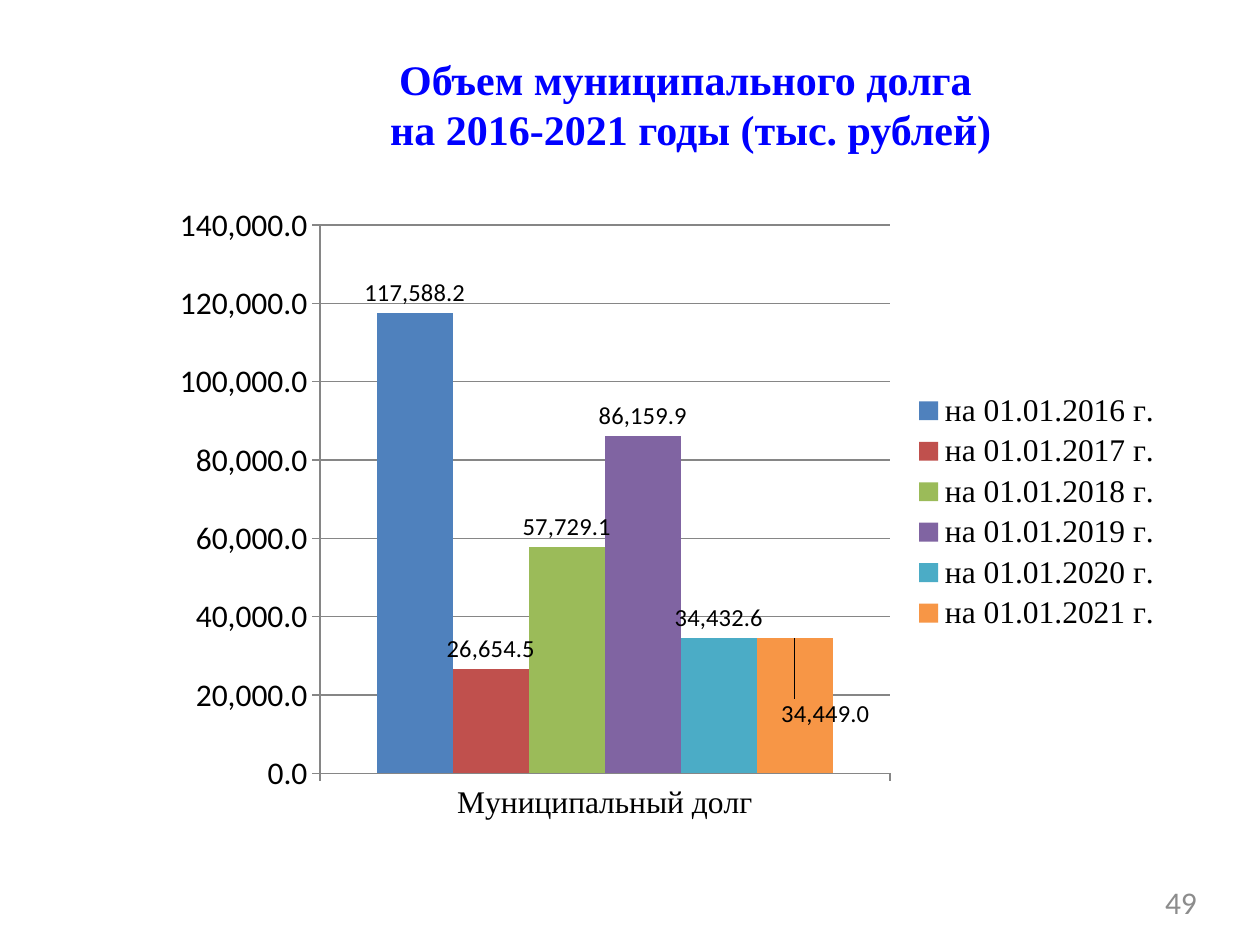
from lxml.etree import SubElement, QName
from pptx import Presentation
from pptx.chart.data import CategoryChartData
from pptx.dml.color import RGBColor
from pptx.enum.chart import XL_CHART_TYPE as ChartType, XL_LABEL_POSITION as LabelPos
from pptx.enum.chart import XL_LEGEND_POSITION as LegendPos, XL_TICK_MARK as Tick
from pptx.enum.text import MSO_ANCHOR as Anchor, PP_ALIGN as Align
from pptx.oxml.ns import qn
from pptx.util import Pt

# Content
TITLE = ["Объем муниципального долга", " на 2016-2021 годы (тыс. рублей)"]
PAGE = ["49"]
CATEGORY = "Муниципальный долг"
DEBT = [
    ("на 01.01.2016 г.", 117588.2, "4F81BD"),
    ("на 01.01.2017 г.", 26654.5, "C0504D"),
    ("на 01.01.2018 г.", 57729.1, "9BBB59"),
    ("на 01.01.2019 г.", 86159.9, "8064A2"),
    ("на 01.01.2020 г.", 34432.6, "4BACC6"),
    ("на 01.01.2021 г.", 34449.0, "F79646"),
]
SERIF, SANS = "Times New Roman", "Calibri"
NUMBERS = "#,##0.0"
PLOT = {"x": 0.16, "y": 0.05, "w": 0.56, "h": 0.86}
LAST_LABEL_SHIFT = {"x": 0.03, "y": 0.15}


def px(n):
    return round(n * 914400 / 126)


def rgb(code):
    return RGBColor.from_string(code)


def style(font, size, face, color, bold=False):
    font.size, font.name, font.bold = Pt(size), face, bold
    font.color.rgb = rgb(color)


def add_text(slide, box, lines, align, **look):
    frame = slide.shapes.add_textbox(*map(px, box)).text_frame
    frame.word_wrap = True
    frame.vertical_anchor = Anchor.MIDDLE
    frame.margin_left = frame.margin_right = frame.margin_top = frame.margin_bottom = 0
    paragraph = frame.paragraphs[0]
    paragraph.alignment = align
    for i, line in enumerate(lines):
        if i:
            paragraph.add_line_break()
        run = paragraph.add_run()
        run.text = line
        style(run.font, **look)


def set_layout(parent, place, inner=False):
    """Give a chart part a manual layout, in fractions of the chart."""
    for old in parent.findall(qn("c:layout")):
        parent.remove(old)
    layout = SubElement(parent, qn("c:layout"))
    manual = SubElement(layout, qn("c:manualLayout"))
    settings = dict(place)
    if inner:
        settings = {"layoutTarget": "inner", "xMode": "edge", "yMode": "edge", **place}
    for key, value in settings.items():
        SubElement(manual, qn("c:" + key)).set("val", str(value))
    parent.insert(1 if QName(parent).localname == "dLbl" else 0, layout)


prs = Presentation()
prs.slide_width, prs.slide_height = px(1260), px(945)
slide = prs.slides.add_slide(prs.slide_layouts[6])

# Title
add_text(slide, (157, 53, 1057, 102), TITLE, Align.CENTER,
         size=24, face=SERIF, color="0000FF", bold=True)

# Debt chart
debt_data = CategoryChartData(number_format=NUMBERS)
debt_data.categories = [CATEGORY]
for date, amount, _ in DEBT:
    debt_data.add_series(date, [amount])
chart = slide.shapes.add_chart(ChartType.COLUMN_CLUSTERED, px(157), px(193),
                               px(1018), px(638), debt_data).chart
chart.has_title = False
style(chart.font, 18, SANS, "000000")
set_layout(chart._chartSpace.chart.plotArea, PLOT, inner=True)

bars = chart.plots[0]
bars.gap_width, bars.overlap, bars.vary_by_categories = 150, 0, False
for series, (_, _, color) in zip(bars.series, DEBT):
    series.format.fill.solid()
    series.format.fill.fore_color.rgb = rgb(color)
    labels = series.data_labels
    labels.show_value = True
    labels.position = LabelPos.OUTSIDE_END
    labels.number_format, labels.number_format_is_linked = NUMBERS, False
    style(labels.font, 14, SANS, "000000")

# The last label sits lower, clear of its neighbour
last = bars.series[len(DEBT) - 1]
last_label = last.points[0].data_label
style(last_label.font, 14, SANS, "000000")
last_label.position = LabelPos.OUTSIDE_END
label_xml = last.data_labels._element.find(qn("c:dLbl"))
set_layout(label_xml, LAST_LABEL_SHIFT)
number_format = SubElement(label_xml, qn("c:numFmt"))
number_format.set("formatCode", NUMBERS)
number_format.set("sourceLinked", "0")
label_xml.insert(2, number_format)

# Axes and legend
dates, amounts = chart.category_axis, chart.value_axis
for axis, face in ((dates, SERIF), (amounts, SANS)):
    axis.major_tick_mark, axis.minor_tick_mark = Tick.OUTSIDE, Tick.NONE
    axis.format.line.color.rgb = rgb("868686")
    style(axis.tick_labels.font, 18, face, "000000")
amounts.minimum_scale, amounts.maximum_scale, amounts.major_unit = 0, 140000, 20000
amounts.tick_labels.number_format = NUMBERS
amounts.tick_labels.number_format_is_linked = False
amounts.has_major_gridlines = True
amounts.major_gridlines.format.line.color.rgb = rgb("868686")

chart.has_legend = True
chart.legend.position = LegendPos.RIGHT
chart.legend.include_in_layout = False
style(chart.legend.font, 18, SERIF, "000000")

# Page number
add_text(slide, (907, 878, 290, 48), PAGE, Align.RIGHT,
         size=18, face=SANS, color="8C8C8C")

prs.save("out.pptx")
